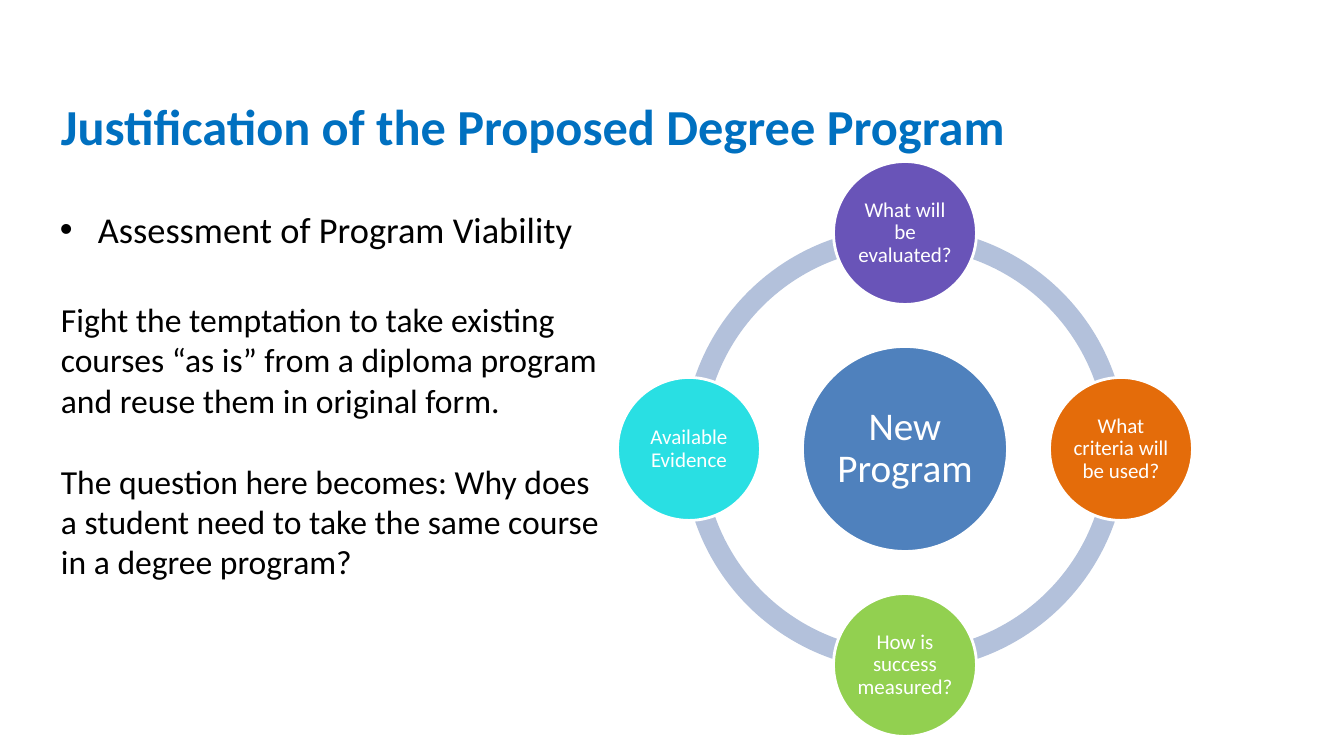
from dataclasses import dataclass
from math import cos, radians, sin

from lxml.etree import SubElement
from pptx import Presentation
from pptx.dml.color import RGBColor
from pptx.enum.shapes import MSO_SHAPE as Shape
from pptx.enum.text import MSO_ANCHOR as Anchor, PP_ALIGN as Align
from pptx.oxml.ns import qn
from pptx.util import Pt

TITLE = "Justification of the Proposed Degree Program"
BULLET = "Assessment of Program Viability"
ADVICE = [
    "Fight the temptation to take existing courses “as is” from a diploma program "
    "and reuse them in original form.",
    "The question here becomes: Why does a student need to take the same course "
    "in a degree program?",
]
HUB = "New Program"
QUESTIONS = [
    ("What will be evaluated?", "6954B8"),
    ("What criteria will be used?", "E46C0A"),
    ("How is success measured?", "92D050"),
    ("Available Evidence", "29DFE3"),
]


@dataclass(frozen=True)
class Theme:
    font: str = "Calibri"
    title: str = "0070C0"
    text: str = "000000"
    light: str = "FFFFFF"
    ring: str = "B3C1DB"
    hub: str = "4F81BD"
    title_size: int = 36
    bullet_size: int = 26
    advice_size: int = 24
    hub_size: int = 28
    question_size: int = 15


THEME = Theme()
SLIDE = (1344, 756)
TITLE_BOX = (51, 90, 1167, 72)
BULLET_BOX = (50, 202, 1206, 512)
ADVICE_BOX = (51, 294, 562, 295)
CENTER = (905, 449)
RING, HUB_SIZE, QUESTION_SIZE, ORBIT = 444, 205, 143, 216
RING_THICKNESS = 0.046
QUARTER_TURN = 54


def px(value):
    return round(value * 914400 / 100.8)


def style(para, size, color, bold=False):
    para.font.name = THEME.font
    para.font.size = Pt(size)
    para.font.bold = bold
    para.font.color.rgb = RGBColor.from_string(color)


def add_text(page, area, lines, size, color, bold=False, gap=0):
    frame = page.shapes.add_textbox(*map(px, area)).text_frame
    frame.word_wrap = True
    for index, line in enumerate(lines):
        para = frame.add_paragraph() if index else frame.paragraphs[0]
        para.text = line
        if index:
            para.space_before = Pt(gap)
        style(para, size, color, bold)
    return frame


def add_bullet(para, indent):
    props = para._p.get_or_add_pPr()
    props.set("marL", str(px(indent)))
    props.set("indent", str(-px(indent)))
    SubElement(props, qn("a:buFont")).set("typeface", "Arial")
    SubElement(props, qn("a:buChar")).set("char", "•")


def add_round(page, kind, center, size, color):
    left, top = (axis - size / 2 for axis in center)
    shape = page.shapes.add_shape(kind, px(left), px(top), px(size), px(size))
    shape.shadow.inherit = False
    shape.fill.solid()
    shape.fill.fore_color.rgb = RGBColor.from_string(color)
    return shape


def add_circle(page, center, size, color, label, label_size, inset):
    circle = add_round(page, Shape.OVAL, center, size, color)
    circle.line.color.rgb = RGBColor.from_string(THEME.light)
    circle.line.width = Pt(2)
    frame = circle.text_frame
    frame.word_wrap = True
    frame.vertical_anchor = Anchor.MIDDLE
    frame.margin_left = frame.margin_right = px(inset)
    frame.margin_top = frame.margin_bottom = px(inset)
    para = frame.paragraphs[0]
    para.text = label
    para.alignment = Align.CENTER
    para.line_spacing = 0.9
    style(para, label_size, THEME.light)


def add_cycle(page):
    count = len(QUESTIONS)
    for index in range(count):
        arc = add_round(page, Shape.BLOCK_ARC, CENTER, RING, THEME.ring)
        arc.line.fill.background()
        arc.adjustments[0] = index * QUARTER_TURN
        arc.adjustments[1] = (index + 1) % count * QUARTER_TURN
        arc.adjustments[2] = RING_THICKNESS
    add_circle(page, CENTER, HUB_SIZE, THEME.hub, HUB, THEME.hub_size, 4)
    for index, (label, color) in enumerate(QUESTIONS):
        angle = radians(index * 360 / count - 90)
        center = (CENTER[0] + ORBIT * cos(angle), CENTER[1] + ORBIT * sin(angle))
        add_circle(page, center, QUESTION_SIZE, color, label, THEME.question_size, 2)


def main():
    deck = Presentation()
    deck.slide_width, deck.slide_height = map(px, SLIDE)
    page = deck.slides.add_slide(deck.slide_layouts[6])
    bullet = add_text(page, BULLET_BOX, [BULLET], THEME.bullet_size, THEME.text)
    para = bullet.paragraphs[0]
    para._p.remove(para._p.pPr)
    add_bullet(para, 38)
    style(para, THEME.bullet_size, THEME.text)
    add_text(page, TITLE_BOX, [TITLE], THEME.title_size, THEME.title, bold=True)
    add_cycle(page)
    add_text(page, ADVICE_BOX, ADVICE, THEME.advice_size, THEME.text, gap=29)
    deck.save("out.pptx")


if __name__ == "__main__":
    main()
